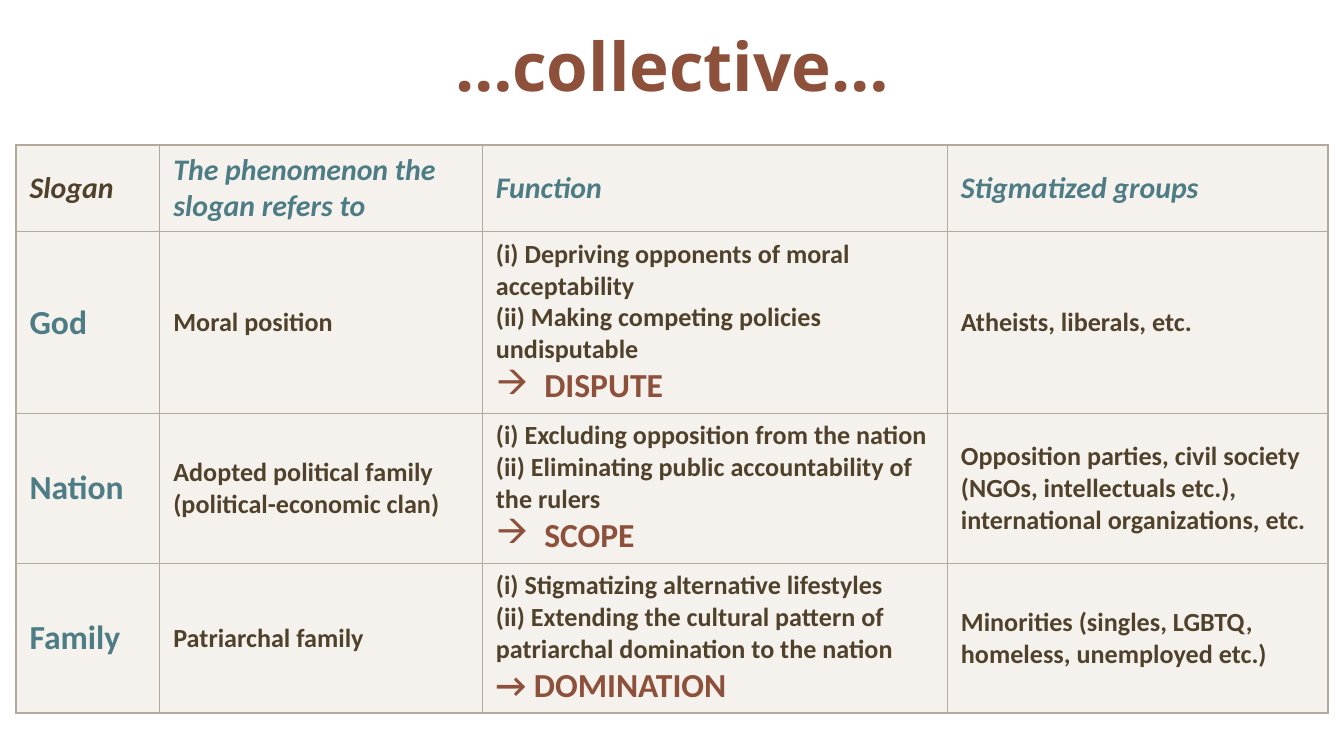
"""Build the slide with the table of slogans and their collective functions."""
import pptx
import pptx.dml.color
import pptx.enum.text
import pptx.oxml
import pptx.oxml.ns
import pptx.util
from lxml import etree

Inches = pptx.util.Inches
Pt = pptx.util.Pt
RGBColor = pptx.dml.color.RGBColor
ANCHOR = pptx.enum.text.MSO_ANCHOR

RUST = RGBColor(0x8D, 0x50, 0x3B)
TEAL = RGBColor(0x4D, 0x7C, 0x85)
BROWN = RGBColor(0x50, 0x41, 0x2B)
SAND = RGBColor(0xEF, 0xEA, 0xE4)
BORDER = RGBColor(0xB3, 0xA9, 0x9D)
NAMESPACE = pptx.oxml.ns.nsdecls("a")

COLUMN_WIDTHS = [1.07, 2.4, 3.46, 2.83]
ROW_HEIGHTS = [0.63, 1.34, 1.1, 1.1]
ROWS = [
    [["Slogan"], ["The phenomenon the slogan refers to"], ["Function"], ["Stigmatized groups"]],
    [
        ["God"],
        ["Moral position"],
        ["(i) Depriving opponents of moral acceptability\v"
         "(ii) Making competing policies undisputable", "DISPUTE"],
        ["Atheists, liberals, etc."],
    ],
    [
        ["Nation"],
        ["Adopted political family (political-economic clan)"],
        ["(i) Excluding opposition from the nation\v"
         "(ii) Eliminating public accountability of the rulers", "SCOPE"],
        ["Opposition parties, civil society (NGOs, intellectuals etc.), "
         "international organizations, etc."],
    ],
    [
        ["Family"],
        ["Patriarchal family"],
        ["(i) Stigmatizing alternative lifestyles",
         "(ii) Extending the cultural pattern of patriarchal domination to the nation",
         "→ DOMINATION"],
        ["Minorities (singles, LGBTQ, homeless, unemployed etc.)"],
    ],
]
ARROW_BULLETS = ["DISPUTE", "SCOPE"]

HEADER = {"name": "Calibri", "size": Pt(16), "bold": True, "italic": True}
SLOGAN = {"name": "Calibri", "size": Pt(18), "bold": True, "italic": False}
BODY = SLOGAN | {"size": Pt(14)}
TITLE = {"name": "Open Sans", "size": Pt(36), "bold": True}


def write_paragraph(para, text, style, color):
    para.text = text
    for span in para.runs:
        for name, value in style.items():
            setattr(span.font, name, value)
        span.font.color.rgb = color


def style_cell(cell, line_widths):
    cell.fill.solid()
    cell.fill.fore_color.rgb = SAND
    properties = cell._tc.get_or_add_tcPr()
    fill_color = properties.find(".//" + pptx.oxml.ns.qn("a:srgbClr"))
    etree.SubElement(fill_color, pptx.oxml.ns.qn("a:alpha"), val="60000")
    for position, (side, width) in enumerate(line_widths.items()):
        line = pptx.oxml.parse_xml(
            f'<a:ln{side} {NAMESPACE} w="{Pt(width)}"><a:solidFill>'
            f'<a:srgbClr val="{BORDER}"/></a:solidFill></a:ln{side}>'
        )
        properties.insert(position, line)


deck = pptx.Presentation()
deck.slide_width = Inches(10)
deck.slide_height = deck.slide_width * 9 // 16
page = deck.slides.add_slide(deck.slide_layouts[5])

title = page.shapes.title
title.left, title.top = Inches(0.12), Inches(0.14)
title.width, title.height = Inches(9.76), Inches(0.87)
frame_format = {
    "vertical_anchor": ANCHOR.TOP,
    "margin_top": Inches(0.04),
    "word_wrap": True,
    "auto_size": pptx.enum.text.MSO_AUTO_SIZE.NONE,
}
for name, value in frame_format.items():
    setattr(title.text_frame, name, value)
title_para = title.text_frame.paragraphs[0]
write_paragraph(title_para, "…collective…", TITLE, RUST)
title_para.alignment = pptx.enum.text.PP_ALIGN.CENTER

last_row = len(ROWS) - 1
last_column = len(COLUMN_WIDTHS) - 1
table = page.shapes.add_table(
    len(ROWS), len(COLUMN_WIDTHS), Inches(0.12), Inches(1.08), Inches(9.76), Inches(4.17)
).table
table.first_row = False
table.horz_banding = False
for column, width in zip(table.columns, COLUMN_WIDTHS):
    column.width = Inches(width)
for row, height in zip(table.rows, ROW_HEIGHTS):
    row.height = Inches(height)

for row_index, row_texts in enumerate(ROWS):
    for column_index, texts in enumerate(row_texts):
        cell = table.cell(row_index, column_index)
        cell.vertical_anchor = ANCHOR.MIDDLE
        style_cell(cell, {
            "L": 1 if column_index == 0 else 0.5,
            "R": 1 if column_index == last_column else 0.5,
            "T": 1 if row_index == 0 else 0.5,
            "B": 1 if row_index == last_row else 0.5,
        })
        for text_index, text in enumerate(texts):
            frame = cell.text_frame
            para = frame.paragraphs[0] if text_index == 0 else frame.add_paragraph()
            if row_index == 0:
                style, color = HEADER, BROWN if column_index == 0 else TEAL
            elif column_index == 0:
                style, color = SLOGAN, TEAL
            elif len(texts) > 1 and text == texts[-1]:
                style, color = SLOGAN, RUST
            else:
                style, color = BODY, BROWN
            if text in ARROW_BULLETS:
                properties = para._p.get_or_add_pPr()
                properties.set("marL", str(Inches(0.36)))
                properties.set("indent", str(-Inches(0.36)))
                for bullet in ('buFont {} typeface="Wingdings"', 'buChar {} char="à"'):
                    properties.append(pptx.oxml.parse_xml(f"<a:{bullet.format(NAMESPACE)}/>"))
            write_paragraph(para, text, style, color)

deck.save("out.pptx")
